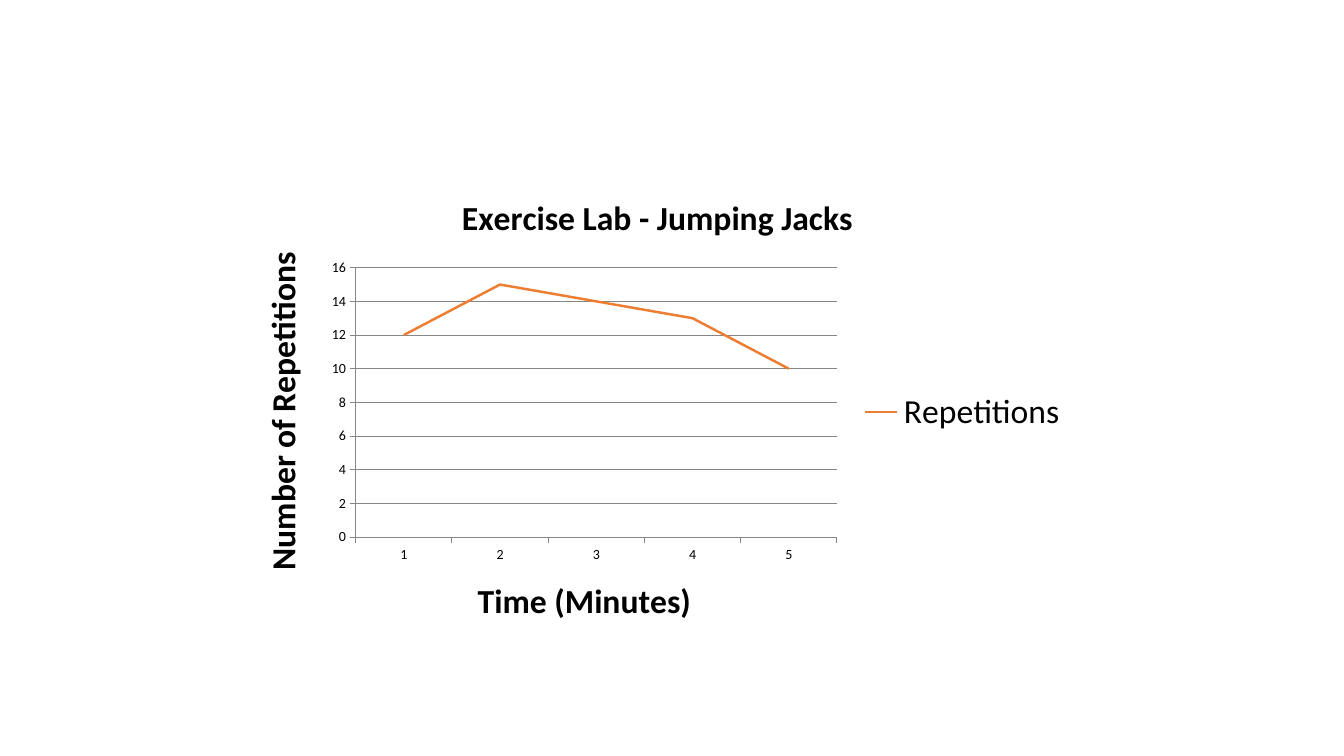
from dataclasses import dataclass

from pptx import Presentation
from pptx.chart.data import CategoryChartData
from pptx.dml.color import RGBColor
from pptx.enum.chart import XL_CHART_TYPE, XL_LEGEND_POSITION, XL_MARKER_STYLE, XL_TICK_MARK
from pptx.util import Inches, Pt

LINE_CHART = XL_CHART_TYPE.LINE
LEGEND_RIGHT = XL_LEGEND_POSITION.RIGHT
NO_MARKER = XL_MARKER_STYLE.NONE
TICK_OUTSIDE = XL_TICK_MARK.OUTSIDE
TICK_NONE = XL_TICK_MARK.NONE


@dataclass(frozen=True)
class Theme:
    font: str = "Calibri"
    text: RGBColor = RGBColor(0x00, 0x00, 0x00)
    grid: RGBColor = RGBColor(0x86, 0x86, 0x86)
    series: RGBColor = RGBColor(0xED, 0x7D, 0x31)
    label_size: Pt = Pt(10)
    title_size: Pt = Pt(24)
    grid_width: Pt = Pt(0.75)
    series_width: Pt = Pt(1.75)


THEME = Theme()
MINUTES = ["1", "2", "3", "4", "5"]
REPETITIONS = [12, 15, 14, 13, 10]


def set_font(font, size, bold=False):
    style = {"name": THEME.font, "size": size, "bold": bold}
    for name, value in style.items():
        setattr(font, name, value)
    font.color.rgb = THEME.text


def set_line(line, color, width):
    line.color.rgb = color
    line.width = width


def add_title(owner, text):
    """Title a chart or an axis in large bold type."""
    para = owner.text_frame.paragraphs[0]
    span = para.add_run()
    span.text = text
    set_font(span.font, THEME.title_size, bold=True)


def style_axis(axis, title, gridlines):
    add_title(axis.axis_title, title)
    settings = {
        "major_tick_mark": TICK_OUTSIDE,
        "minor_tick_mark": TICK_NONE,
        "has_major_gridlines": gridlines,
    }
    for name, value in settings.items():
        setattr(axis, name, value)
    set_font(axis.tick_labels.font, THEME.label_size)
    set_line(axis.format.line, THEME.grid, THEME.grid_width)
    if gridlines:
        set_line(axis.major_gridlines.format.line, THEME.grid, THEME.grid_width)


def add_legend(chart):
    chart.has_legend = True
    chart.legend.position = LEGEND_RIGHT
    chart.legend.include_in_layout = False
    set_font(chart.legend.font, THEME.title_size)


def add_line_chart(page):
    data = CategoryChartData()
    data.categories = MINUTES
    data.add_series("Repetitions", REPETITIONS)
    chart = page.shapes.add_chart(
        LINE_CHART, Inches(2.34), Inches(1.73), Inches(8.36), Inches(4.72), data
    ).chart
    set_font(chart.font, THEME.label_size)

    # Title and legend
    chart.has_title = True
    add_title(chart.chart_title, "Exercise Lab - Jumping Jacks")
    chart.chart_title.include_in_layout = False
    add_legend(chart)

    # Axes
    style_axis(chart.category_axis, "Time (Minutes)", gridlines=False)
    style_axis(chart.value_axis, "Number of Repetitions", gridlines=True)
    scale = {"minimum_scale": 0, "maximum_scale": 16, "major_unit": 2}
    for name, value in scale.items():
        setattr(chart.value_axis, name, value)

    # Series line
    plot = chart.plots[0]
    plot.vary_by_categories = False
    series = plot.series[0]
    series.smooth = False
    series.marker.style = NO_MARKER
    set_line(series.format.line, THEME.series, THEME.series_width)


def main():
    deck = Presentation()
    deck.slide_width = Inches(13.33)
    deck.slide_height = Inches(7.5)
    page = deck.slides.add_slide(deck.slide_layouts[6])
    add_line_chart(page)
    deck.save("out.pptx")


if __name__ == "__main__":
    main()
